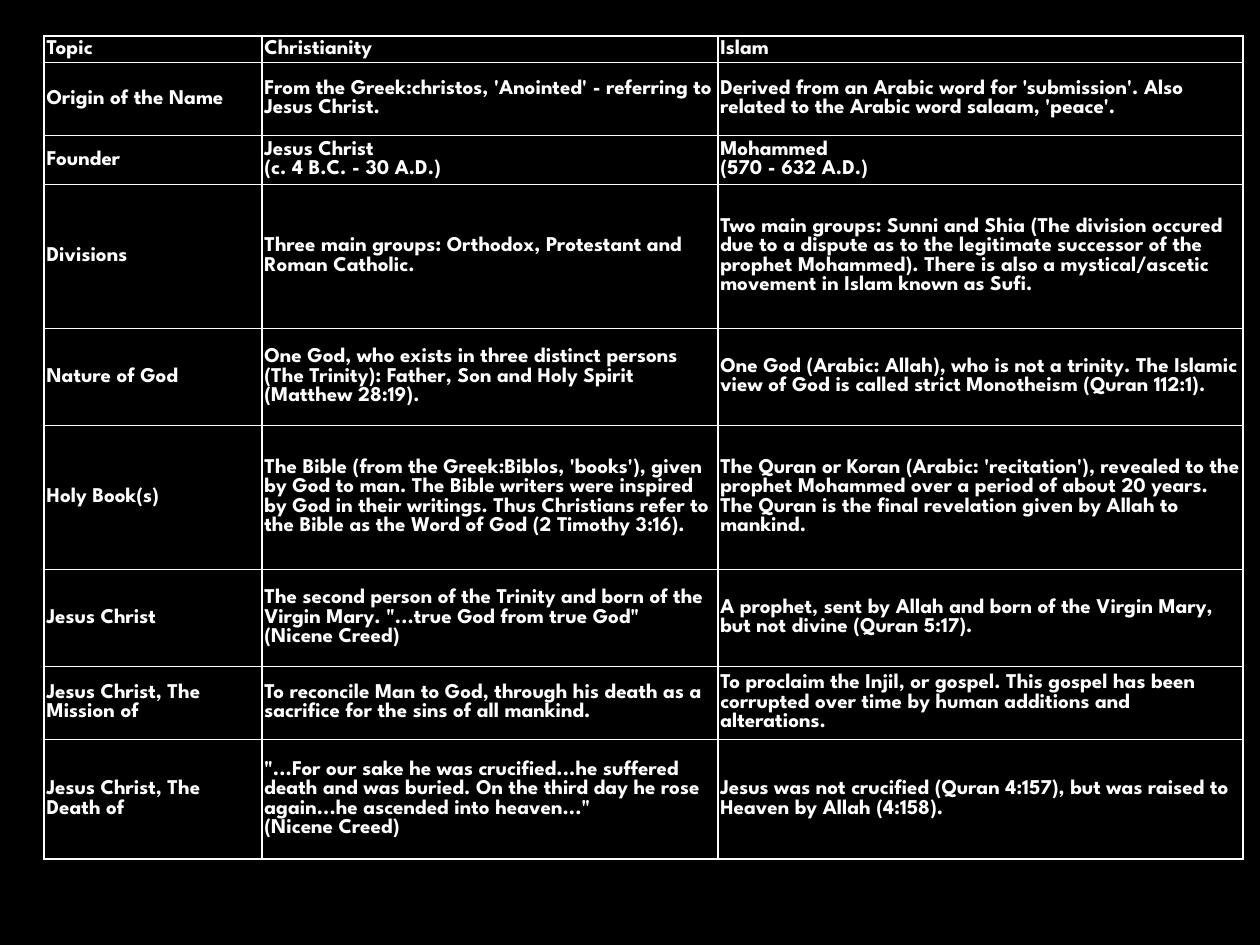
import dataclasses

import lxml.etree
import pptx
import pptx.dml.color
import pptx.enum.text
import pptx.oxml.ns
import pptx.table
import pptx.util

Cm = pptx.util.Cm
FONT = "League Spartan"
WHITE = "FFFFFF"
BLACK = "000000"
COLUMN_WIDTHS = (4.39, 9.19, 10.59)


@dataclasses.dataclass(frozen=True)
class Comparison:
    height: float
    topic: str
    christianity: str
    islam: str


COMPARISONS = [
    Comparison(0.53, "Topic", "Christianity", "Islam"),
    Comparison(
        1.47,
        "Origin of the Name",
        "From the Greek:christos, 'Anointed' - referring to Jesus Christ.",
        "Derived from an Arabic word for 'submission'. Also related to the "
        "Arabic word salaam, 'peace'.",
    ),
    Comparison(
        0.99,
        "Founder",
        "Jesus Christ\v(c. 4 B.C. - 30 A.D.)",
        "Mohammed\v(570 - 632 A.D.)",
    ),
    Comparison(
        2.9,
        "Divisions",
        "Three main groups: Orthodox, Protestant and Roman Catholic.",
        "Two main groups: Sunni and Shia (The division occured due to a dispute "
        "as to the legitimate successor of the prophet Mohammed). There is also "
        "a mystical/ascetic movement in Islam known as Sufi.",
    ),
    Comparison(
        1.96,
        "Nature of God",
        "One God, who exists in three distinct persons (The Trinity): Father, "
        "Son and Holy Spirit (Matthew 28:19).",
        "One God (Arabic: Allah), who is not a trinity. The Islamic view of God "
        "is called strict Monotheism (Quran 112:1).",
    ),
    Comparison(
        2.9,
        "Holy Book(s)",
        "The Bible (from the Greek:Biblos, 'books'), given by God to man. The "
        "Bible writers were inspired by God in their writings. Thus Christians "
        "refer to the Bible as the Word of God (2 Timothy 3:16).",
        "The Quran or Koran (Arabic: 'recitation'), revealed to the prophet "
        "Mohammed over a period of about 20 years. The Quran is the final "
        "revelation given by Allah to mankind.",
    ),
    Comparison(
        1.96,
        "Jesus Christ",
        "The second person of the Trinity and born of the Virgin Mary. "
        "\"...true God from true God\"\v(Nicene Creed)",
        "A prophet, sent by Allah and born of the Virgin Mary, but not divine "
        "(Quran 5:17).",
    ),
    Comparison(
        1.47,
        "Jesus Christ, The Mission of",
        "To reconcile Man to God, through his death as a sacrifice for the sins "
        "of all mankind.",
        "To proclaim the Injil, or gospel. This gospel has been corrupted over "
        "time by human additions and alterations.",
    ),
    Comparison(
        2.41,
        "Jesus Christ, The Death of",
        "\"...For our sake he was crucified...he suffered death and was buried. "
        "On the third day he rose again...he ascended into heaven...\"\v"
        "(Nicene Creed)",
        "Jesus was not crucified (Quran 4:157), but was raised to Heaven by "
        "Allah (4:158).",
    ),
]


def rgb(value: str) -> pptx.dml.color.RGBColor:
    return pptx.dml.color.RGBColor.from_string(value)


def draw_borders(cell: pptx.table._Cell) -> None:
    qn = pptx.oxml.ns.qn
    properties = cell._tc.get_or_add_tcPr()
    for position, side in enumerate(("a:lnL", "a:lnR", "a:lnT", "a:lnB")):
        border = lxml.etree.Element(qn(side), w=str(pptx.util.Pt(1)))
        fill = lxml.etree.SubElement(border, qn("a:solidFill"))
        lxml.etree.SubElement(fill, qn("a:srgbClr"), val=WHITE)
        properties.insert(position, border)


def write_cell(cell: pptx.table._Cell, wording: str) -> None:
    cell.text_frame.text = wording
    cell.vertical_anchor = pptx.enum.text.MSO_ANCHOR.MIDDLE
    cell.margin_left = cell.margin_right = Cm(0.05)
    cell.margin_top = cell.margin_bottom = Cm(0.03)
    cell.fill.background()
    for paragraph in cell.text_frame.paragraphs:
        paragraph.font.name = FONT
        paragraph.font.size = pptx.util.Pt(12)
        paragraph.font.bold = True
        paragraph.font.color.rgb = rgb(WHITE)
    draw_borders(cell)


def main() -> None:
    presentation = pptx.Presentation()
    presentation.slide_width = Cm(25.4)
    presentation.slide_height = Cm(19.05)
    slide = presentation.slides.add_slide(presentation.slide_layouts[6])
    slide.background.fill.solid()
    slide.background.fill.fore_color.rgb = rgb(BLACK)

    religions = slide.shapes.add_table(
        len(COMPARISONS),
        len(COLUMN_WIDTHS),
        Cm(0.89),
        Cm(0.73),
        Cm(sum(COLUMN_WIDTHS)),
        Cm(sum(comparison.height for comparison in COMPARISONS)),
    ).table
    religions.first_row = False
    religions.horz_banding = False
    for column, width in zip(religions.columns, COLUMN_WIDTHS):
        column.width = Cm(width)
    for row, comparison in zip(religions.rows, COMPARISONS):
        row.height = Cm(comparison.height)
        wordings = (comparison.topic, comparison.christianity, comparison.islam)
        for cell, wording in zip(row.cells, wordings):
            write_cell(cell, wording)

    presentation.save("out.pptx")


if __name__ == "__main__":
    main()
